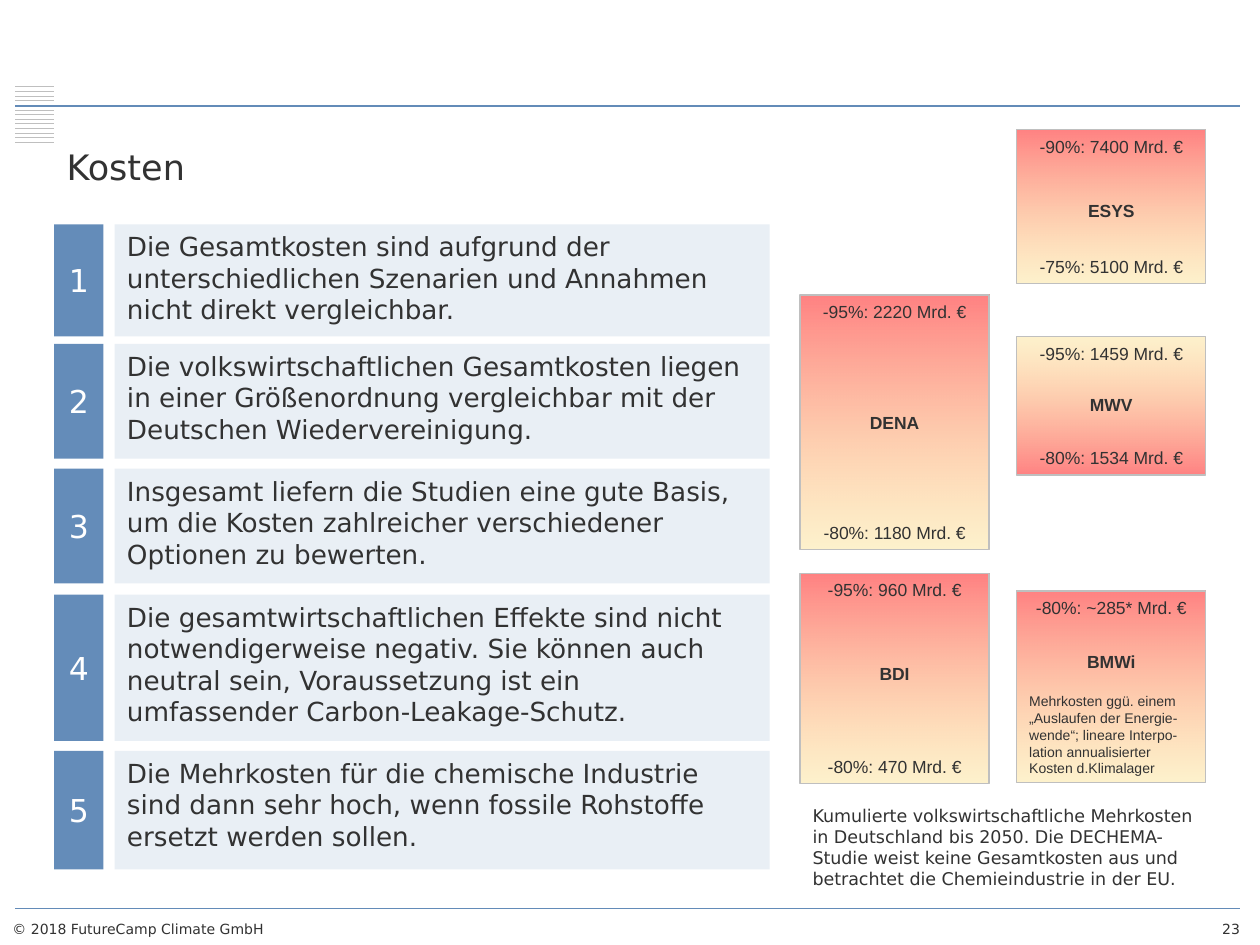
from dataclasses import dataclass
from lxml.etree import SubElement
from pptx import Presentation
from pptx.dml.color import RGBColor as RGB
from pptx.enum.shapes import MSO_CONNECTOR as CONN, MSO_SHAPE as SHAPE
from pptx.enum.text import MSO_ANCHOR as ANCHOR, MSO_AUTO_SIZE as AUTO, PP_ALIGN as ALIGN
from pptx.oxml.ns import qn
from pptx.util import Inches, Pt


@dataclass(frozen=True)
class Theme:
    ink: str = "323232"
    white: str = "FFFFFF"
    rule: str = "638BB8"
    badge: str = "648CB9"
    panel: str = "E9EFF5"
    grey: str = "BFBFBF"
    red: tuple = ("FF4C4C", 70)
    sand: tuple = ("FCD96F", 35)
    main: str = "DejaVu Sans"
    alt: str = "Arial"
    title: int = 20
    digit: int = 18
    body: int = 15
    label: int = 10
    small: int = 8


theme = Theme()

deck = Presentation()
deck.slide_width, deck.slide_height = Inches(10), Inches(7.5)
slide = deck.slides.add_slide(deck.slide_layouts[6])
shapes = slide.shapes


def write(shape, text, size, font=theme.main, color=theme.ink, align=ALIGN.LEFT,
          anchor=ANCHOR.TOP, bold=False, wrap=True):
    frame = shape.text_frame
    frame.word_wrap = wrap
    frame.vertical_anchor = anchor
    para = frame.paragraphs[0]
    para.alignment = align
    run = para.add_run()
    run.text = text
    run.font.name = font
    run.font.size = Pt(size)
    run.font.bold = bold
    run.font.color.rgb = RGB.from_string(color)
    return frame


def block(left, top, width, height):
    shape = shapes.add_shape(SHAPE.RECTANGLE, Inches(left), Inches(top),
                             Inches(width), Inches(height))
    shape.shadow.inherit = False
    return shape


rules = [(y, 9.84, theme.rule, 1) for y in (7.21, 0.84)]
rules += [(0.69 + i * 0.44 / 12, 0.43, theme.grey, 0.5) for i in range(13) if i != 4]
for y, end, color, width in rules:
    line = shapes.add_connector(CONN.STRAIGHT, Inches(0.12), Inches(y), Inches(end), Inches(y))
    line.line.color.rgb = RGB.from_string(color)
    line.line.width = Pt(width)
    SubElement(line._element.spPr, qn("a:effectLst"))

head = shapes.add_textbox(Inches(0.43), Inches(1.04), Inches(9.14), Inches(0.57))
frame = write(head, "Kosten", theme.title, anchor=ANCHOR.MIDDLE)
frame.margin_top = frame.margin_bottom = 0

points = [
    (1.78, 0.89, "Die Gesamtkosten sind aufgrund der unterschiedlichen Szenarien und "
                 "Annahmen nicht direkt vergleichbar."),
    (2.73, 0.91, "Die volkswirtschaftlichen Gesamtkosten liegen in einer Größenordnung "
                 "vergleichbar mit der Deutschen Wiedervereinigung."),
    (3.72, 0.91, "Insgesamt liefern die Studien eine gute Basis, um die Kosten zahlreicher "
                 "verschiedener Optionen zu bewerten."),
    (4.72, 1.16, "Die gesamtwirtschaftlichen Effekte sind nicht notwendigerweise negativ. "
                 "Sie können auch neutral sein, Voraussetzung ist ein umfassender "
                 "Carbon-Leakage-Schutz."),
    (5.96, 0.94, "Die Mehrkosten für die chemische Industrie sind dann sehr hoch, wenn "
                 "fossile Rohstoffe ersetzt werden sollen."),
]
for num, (top, height, text) in enumerate(points, 1):
    panel = block(0.91, top, 5.2, height)
    badge = block(0.43, top, 0.39, height)
    for shape, color in ((panel, theme.panel), (badge, theme.badge)):
        shape.fill.solid()
        shape.fill.fore_color.rgb = RGB.from_string(color)
        shape.line.fill.background()
    write(panel, text, theme.body)
    write(badge, str(num), theme.digit, color=theme.white, align=ALIGN.CENTER,
          anchor=ANCHOR.MIDDLE, wrap=False)

wide, tall = 1.5, 0.27
left, right = 6.35, 8.07
fade = (theme.red, theme.sand)
studies = [
    (left, 4.55, 1.67, fade, "-95%: 960 Mrd. €", 5.21, "BDI", "-80%: 470 Mrd. €"),
    (left, 2.34, 2.02, fade, "-95%: 2220 Mrd. €", 3.22, "DENA", "-80%: 1180 Mrd. €"),
    (right, 4.69, 1.52, fade, "-80%: ~285* Mrd. €", 5.12, "BMWi", None),
    (right, 1.03, 1.22, fade, "-90%: 7400 Mrd. €", 1.54, "ESYS", "-75%: 5100 Mrd. €"),
    (right, 2.67, 1.1, fade[::-1], "-95%: 1459 Mrd. €", 3.08, "MWV", "-80%: 1534 Mrd. €"),
]
for x, top, height, stops, upper, mid, name, lower in studies:
    card = block(x, top, wide, height)
    card.fill.gradient()
    card.fill.gradient_angle = 270
    for stop, (color, _) in zip(card.fill.gradient_stops, stops):
        stop.color.rgb = RGB.from_string(color)
    tints = card._element.spPr.findall(".//" + qn("a:srgbClr"))
    for tint, (_, alpha) in zip(tints, stops):
        SubElement(tint, qn("a:alpha"), val=str(alpha * 1000))
    card.line.color.rgb = RGB.from_string(theme.grey)
    card.line.width = Pt(0.75)
    labels = [(top, upper, False), (mid, name, True), (top + height - tall, lower, False)]
    for y, text, bold in labels:
        if text:
            box = shapes.add_textbox(Inches(x), Inches(y), Inches(wide), Inches(tall))
            write(box, text, theme.label, theme.alt, align=ALIGN.CENTER, bold=bold)

notes = [
    (right, 5.45, wide, 0.77, theme.small, theme.alt, ALIGN.LEFT,
     "Mehrkosten ggü. einem „Auslaufen der Energie-wende“; lineare Interpo-lation "
     "annualisierter Kosten d.Klimalager"),
    (left, 6.34, 3.31, 0.77, theme.label, theme.main, ALIGN.LEFT,
     "Kumulierte volkswirtschaftliche Mehrkosten in Deutschland bis 2050. Die "
     "DECHEMA-Studie weist keine Gesamtkosten aus und betrachtet die "
     "Chemieindustrie in der EU."),
    (0, 7.26, 3.5, 0.24, theme.small, theme.main, ALIGN.LEFT,
     "© 2018 FutureCamp Climate GmbH"),
    (9, 7.26, 0.94, 0.24, theme.small, theme.main, ALIGN.RIGHT, "23"),
]
for x, y, width, height, size, font, align, text in notes:
    box = shapes.add_textbox(Inches(x), Inches(y), Inches(width), Inches(height))
    write(box, text, size, font, align=align).auto_size = AUTO.SHAPE_TO_FIT_TEXT

deck.save("out.pptx")
